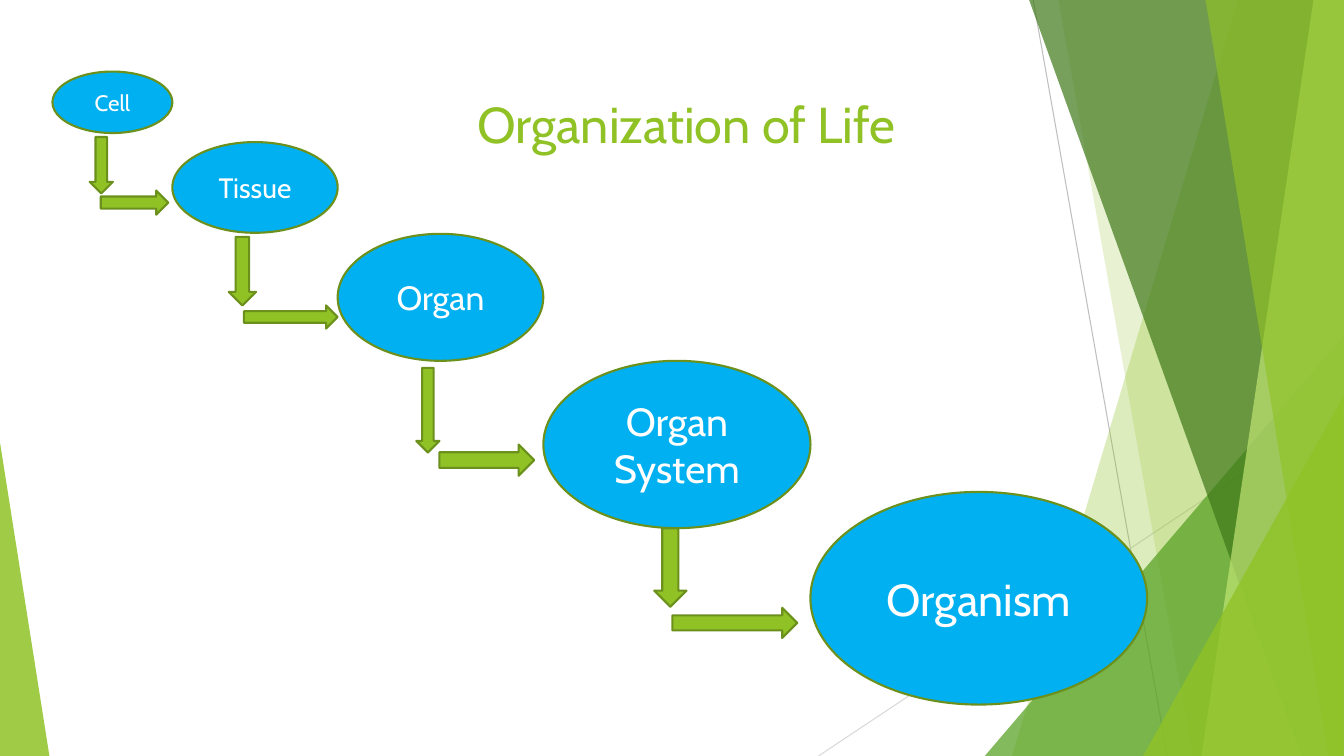
from dataclasses import dataclass

from pptx import Presentation
from pptx.dml.color import RGBColor
from pptx.enum.shapes import MSO_CONNECTOR, MSO_SHAPE
from pptx.enum.text import MSO_ANCHOR, PP_ALIGN
from pptx.oxml.ns import qn
from pptx.util import Emu, Inches, Pt

OVAL, TRIANGLE = MSO_SHAPE.OVAL, MSO_SHAPE.ISOSCELES_TRIANGLE
DOWN, RIGHT = MSO_SHAPE.DOWN_ARROW, MSO_SHAPE.RIGHT_ARROW
STRAIGHT = MSO_CONNECTOR.STRAIGHT
CENTER, TOP, MIDDLE = PP_ALIGN.CENTER, MSO_ANCHOR.TOP, MSO_ANCHOR.MIDDLE

# Grid: ten columns and ten rows to the inch
CELL = Inches(0.1)
COLS, ROWS = 133.33, 75


@dataclass(frozen=True)
class Theme:
    font: str = "Cabin"
    title_size: float = 36
    first_stage_size: float = 16
    stage_size_step: float = 4
    outline_width: float = 1.5
    hairline_width: float = 0.75
    green: str = "90C226"
    mid_green: str = "54A021"
    dark_green: str = "3F7819"
    pale_green: str = "C0E474"
    outline: str = "6B901C"
    blue: str = "00B0F0"
    white: str = "FFFFFF"
    grey: str = "BFBFBF"
    light_grey: str = "D9D9D9"


THEME = Theme()


@dataclass(frozen=True)
class Hairline:
    x1: float
    y1: float
    x2: float
    y2: float
    color: str


@dataclass(frozen=True)
class Band:
    """Full-height facet from a slanted left side to the right edge."""
    top_x: float
    foot_x: float
    color: str
    opacity: int


@dataclass(frozen=True)
class Wedge:
    """Right triangle standing on the bottom edge; apex 0 is left, 1 is right."""
    left: float
    width: float
    height: float
    apex: float
    color: str
    opacity: int


@dataclass(frozen=True)
class Stage:
    label: str
    top: float
    width: float
    height: float


@dataclass(frozen=True)
class Arrow:
    kind: MSO_SHAPE
    left: float
    top: float
    width: float
    height: float


HAIRLINES = [
    Hairline(102.5, 0, 115.8, ROWS, THEME.grey),
    Hairline(COLS, 40.3, 81.2, ROWS, THEME.light_grey),
]
FACETS = [
    Band(122.8, 100.4, THEME.green, 30),
    Band(105, 118.3, THEME.green, 20),
    Wedge(97.7, 35.6, 41.7, 1, THEME.mid_green, 72),
    Band(102.1, 129.1, THEME.dark_green, 70),
    Band(130.3, 119.2, THEME.pale_green, 70),
    Band(119.6, 131.8, THEME.green, 65),
    Wedge(113.4, 19.9, 35.7, 1, THEME.green, 80),
    Wedge(0, 4.9, 31.1, 0, THEME.green, 85),
]
# Each stage starts at the column where the one before it ends
FIRST_STAGE_LEFT = 5.2
STAGES = [
    Stage("Cell", 7.1, 11.9, 6.1),
    Stage("Tissue", 14.1, 16.4, 9),
    Stage("Organ", 23.2, 20.4, 12.6),
    Stage("Organ System", 35.8, 26.5, 16.6),
    Stage("Organism", 48.8, 33.4, 21.1),
]
ARROWS = [
    Arrow(DOWN, 8.9, 13.6, 2.3, 5.6),
    Arrow(RIGHT, 10, 18.9, 6.7, 2.4),
    Arrow(DOWN, 22.7, 23.5, 2.7, 6.8),
    Arrow(RIGHT, 24.2, 30.3, 9.3, 2.3),
    Arrow(DOWN, 41.3, 36.5, 2.3, 8.4),
    Arrow(RIGHT, 43.6, 44.1, 9.4, 3.1),
    Arrow(DOWN, 64.9, 52.4, 3.2, 7.8),
    Arrow(RIGHT, 66.7, 60.3, 12.4, 3),
]


def cells(*counts: float) -> list[Emu]:
    return [Emu(round(n * CELL)) for n in counts]


def paint(sp, color: str, opacity: int = 100, outline: str = "") -> None:
    sp.shadow.inherit = False
    sp.fill.solid()
    sp.fill.fore_color.rgb = RGBColor.from_string(color)
    if opacity < 100:
        clr = sp.fill._xPr.find(qn("a:solidFill"))[0]
        clr.makeelement(qn("a:alpha"))
        alpha = clr.makeelement(qn("a:alpha"), {"val": str(opacity * 1000)})
        clr.append(alpha)
    if outline:
        sp.line.color.rgb = RGBColor.from_string(outline)
        sp.line.width = Pt(THEME.outline_width)
    else:
        sp.line.fill.background()


def write(sp, text: str, size: float, color: str, anchor: MSO_ANCHOR) -> None:
    tf = sp.text_frame
    p = tf.paragraphs[0]
    r = p.add_run()
    formats = [
        (tf, {"word_wrap": True, "vertical_anchor": anchor}),
        (p, {"alignment": CENTER}),
        (r, {"text": text}),
        (r.font, {"name": THEME.font, "size": Pt(size)}),
        (r.font.color, {"rgb": RGBColor.from_string(color)}),
    ]
    for target, values in formats:
        for name, value in values.items():
            setattr(target, name, value)


def draw_hairline(s, line: Hairline) -> None:
    cn = s.shapes.add_connector(STRAIGHT, *cells(line.x1, line.y1, line.x2, line.y2))
    cn.line.color.rgb = RGBColor.from_string(line.color)
    cn.line.width = Pt(THEME.hairline_width)
    sp_pr = cn._element.spPr
    sp_pr.append(sp_pr.makeelement(qn("a:effectLst")))


def draw_facet(s, facet: Band | Wedge) -> None:
    if isinstance(facet, Band):
        fb = s.shapes.build_freeform(*cells(facet.top_x, 0))
        corners = [(COLS, 0), (COLS, ROWS), (facet.foot_x, ROWS)]
        fb.add_line_segments([cells(*corner) for corner in corners], close=True)
        sp = fb.convert_to_shape()
    else:
        box = cells(facet.left, ROWS - facet.height, facet.width, facet.height)
        sp = s.shapes.add_shape(TRIANGLE, *box)
        sp.adjustments[0] = facet.apex
    paint(sp, facet.color, facet.opacity)


def draw_stage(s, stage: Stage, left: float, size: float) -> None:
    sp = s.shapes.add_shape(OVAL, *cells(left, stage.top, stage.width, stage.height))
    paint(sp, THEME.blue, outline=THEME.outline)
    write(sp, stage.label, size, THEME.white, MIDDLE)


def draw_arrow(s, arrow: Arrow) -> None:
    box = cells(arrow.left, arrow.top, arrow.width, arrow.height)
    paint(s.shapes.add_shape(arrow.kind, *box), THEME.green, outline=THEME.outline)


def main() -> None:
    prs = Presentation()
    prs.slide_width, prs.slide_height = cells(COLS, ROWS)
    s = prs.slides.add_slide(prs.slide_layouts[6])

    # Backdrop
    for line in HAIRLINES:
        draw_hairline(s, line)
    for facet in FACETS:
        draw_facet(s, facet)

    # Title
    title = s.shapes.add_textbox(*cells(21.1, 8.7, 94, 14.4))
    write(title, "Organization of Life", THEME.title_size, THEME.green, TOP)

    # Staircase of stages, each lettered larger than the last
    left = FIRST_STAGE_LEFT
    for i, stage in enumerate(STAGES):
        draw_stage(s, stage, left, THEME.first_stage_size + i * THEME.stage_size_step)
        left += stage.width

    # Arrows between the stages
    for arrow in ARROWS:
        draw_arrow(s, arrow)

    prs.save("out.pptx")


if __name__ == "__main__":
    main()
